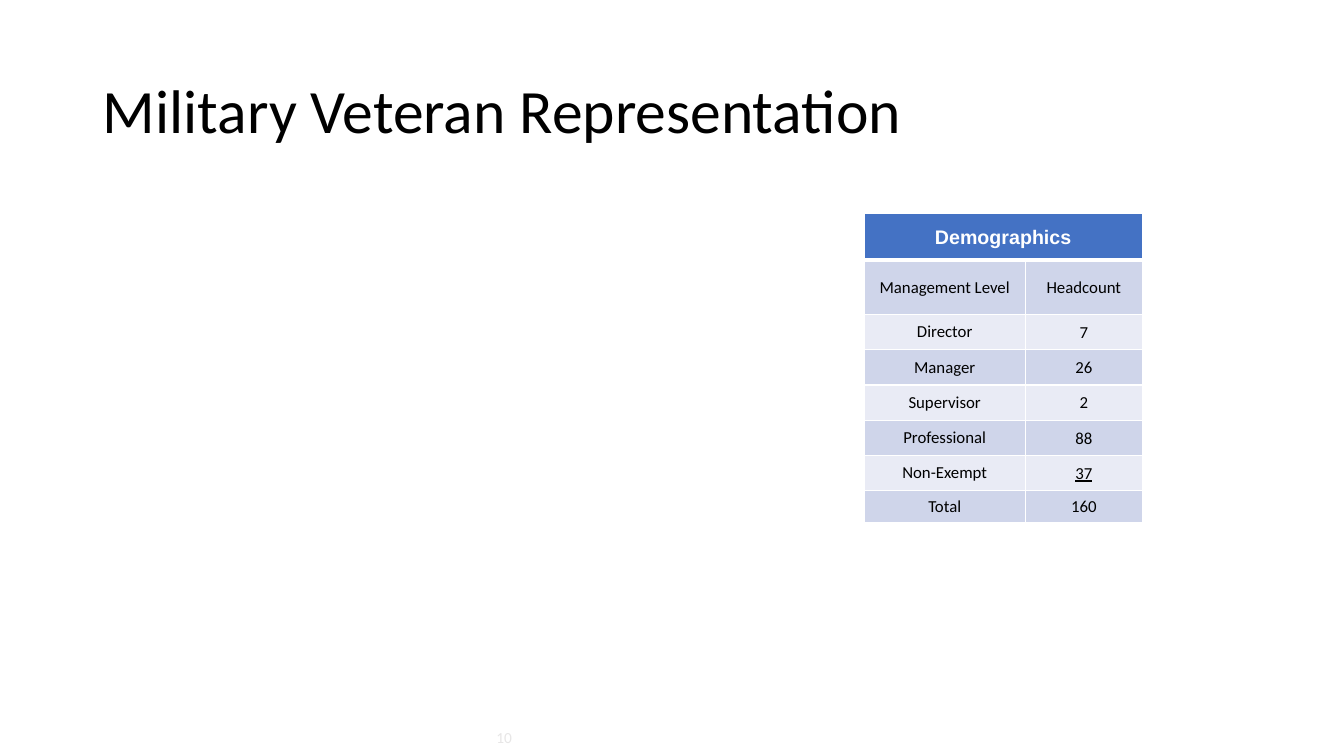
"""Build the Military Veteran Representation slide with its demographics table."""

import dataclasses
import typing

import lxml.etree
import pptx
import pptx.dml.color
import pptx.enum.text
import pptx.oxml
import pptx.oxml.ns
import pptx.util

EMU_PER_PX = 9144


@dataclasses.dataclass(frozen=True)
class Theme:
    body_font: str = "Calibri"
    header_font: str = "Arial"
    black: str = "000000"
    white: str = "FFFFFF"
    page_number: str = "E7E6E6"
    header_fill: str = "4472C4"
    bands: tuple[str, str] = ("CFD5EA", "E9EBF5")
    title_size: int = 44
    header_size: int = 14
    cell_size: int = 12
    page_number_size: int = 11
    thin_border: int = 1
    thick_border: int = 3


class Box(typing.NamedTuple):
    left: int
    top: int
    width: int
    height: int


class TextStyle(typing.NamedTuple):
    font: str
    size: int
    color: str
    bold: bool = False
    underline: bool = False


class LevelRow(typing.NamedTuple):
    level: str
    headcount: str
    height: int = 35
    level_margin: int = 4
    underline: bool = False


THEME = Theme()
TITLE_BOX = Box(92, 40, 1150, 145)
TABLE_BOX = Box(857, 212, 276, 306)
PAGE_NUMBER_BOX = Box(450, 717, 100, 30)
COLUMN_WIDTHS = (160, 116)
HEADER_HEIGHT = 46
LEVEL_ROWS = (
    LevelRow("Management Level", "Headcount", height=54, level_margin=0),
    LevelRow("Director", "7"),
    LevelRow("Manager", "26"),
    LevelRow("Supervisor", "2"),
    LevelRow("Professional", "88"),
    LevelRow("Non-Exempt", "37", underline=True),
    LevelRow("Total", "160", height=31, level_margin=0),
)


def px(length: int) -> pptx.util.Emu:
    """Turn whole px into EMU."""
    return pptx.util.Emu(length * EMU_PER_PX)


def emu_box(box: Box) -> tuple[pptx.util.Emu, ...]:
    """Give the four lengths of a box in EMU."""
    return tuple(px(length) for length in box)


def style_paragraph(paragraph, style: TextStyle) -> None:
    """Apply a text style to a whole paragraph."""
    font = paragraph.font
    font.name = style.font
    font.size = pptx.util.Pt(style.size)
    font.bold = style.bold
    font.underline = style.underline
    font.color.rgb = pptx.dml.color.RGBColor.from_string(style.color)


def set_borders(cell, bottom_width: int) -> None:
    """Draw white lines on the four sides of a cell."""
    properties = cell._tc.get_or_add_tcPr()
    for index, side in enumerate("LRTB"):
        points = bottom_width if side == "B" else THEME.thin_border
        line = lxml.etree.Element(
            pptx.oxml.ns.qn(f"a:ln{side}"), w=str(pptx.util.Pt(points))
        )
        fill = lxml.etree.SubElement(line, pptx.oxml.ns.qn("a:solidFill"))
        lxml.etree.SubElement(fill, pptx.oxml.ns.qn("a:srgbClr"), val=THEME.white)
        properties.insert(index, line)


def fill_cell(
    cell,
    text: str,
    style: TextStyle,
    fill: str,
    margin: int = 0,
    bottom_width: int = THEME.thin_border,
) -> None:
    """Set the text, margins, fill and borders of a cell."""
    cell.text = text
    cell.vertical_anchor = pptx.enum.text.MSO_ANCHOR.MIDDLE
    cell.margin_left = cell.margin_right = cell.margin_bottom = px(margin)
    cell.margin_top = px(max(margin, 1))
    paragraph = cell.text_frame.paragraphs[0]
    paragraph.alignment = pptx.enum.text.PP_ALIGN.CENTER
    style_paragraph(paragraph, style)
    cell.fill.solid()
    cell.fill.fore_color.rgb = pptx.dml.color.RGBColor.from_string(fill)
    set_borders(cell, bottom_width)


def format_title(slide) -> None:
    """Place and format the slide title."""
    title = slide.shapes.title
    title.left, title.top, title.width, title.height = emu_box(TITLE_BOX)
    title.text_frame.text = "Military Veteran Representation"
    title.text_frame.vertical_anchor = pptx.enum.text.MSO_ANCHOR.MIDDLE
    paragraph = title.text_frame.paragraphs[0]
    paragraph.alignment = pptx.enum.text.PP_ALIGN.LEFT
    paragraph.line_spacing = 0.9
    style_paragraph(
        paragraph, TextStyle(THEME.body_font, THEME.title_size, THEME.black)
    )


def add_demographics(slide) -> None:
    """Add the table of headcount by management level."""
    table = slide.shapes.add_table(
        len(LEVEL_ROWS) + 1, len(COLUMN_WIDTHS), *emu_box(TABLE_BOX)
    ).table
    table.first_row = False
    table.horz_banding = False
    for column, width in zip(table.columns, COLUMN_WIDTHS):
        column.width = px(width)

    table.rows[0].height = px(HEADER_HEIGHT)
    table.cell(0, 0).merge(table.cell(0, 1))
    header_style = TextStyle(
        THEME.header_font, THEME.header_size, THEME.white, bold=True
    )
    for column, text in enumerate(("Demographics", "")):
        fill_cell(
            table.cell(0, column),
            text,
            header_style,
            THEME.header_fill,
            bottom_width=THEME.thick_border,
        )

    level_style = TextStyle(THEME.body_font, THEME.cell_size, THEME.black)
    for index, row in enumerate(LEVEL_ROWS):
        table.rows[index + 1].height = px(row.height)
        band = THEME.bands[index % 2]
        headcount_style = level_style._replace(underline=row.underline)
        level_cell = table.cell(index + 1, 0)
        fill_cell(level_cell, row.level, level_style, band, row.level_margin)
        fill_cell(table.cell(index + 1, 1), row.headcount, headcount_style, band)


def add_page_number(slide) -> None:
    """Add the pale page number at the foot of the slide."""
    frame = slide.shapes.add_textbox(*emu_box(PAGE_NUMBER_BOX)).text_frame
    frame.word_wrap = True
    frame.vertical_anchor = pptx.enum.text.MSO_ANCHOR.MIDDLE
    frame.text = "10"
    paragraph = frame.paragraphs[0]
    paragraph.alignment = pptx.enum.text.PP_ALIGN.CENTER
    style_paragraph(
        paragraph,
        TextStyle(THEME.body_font, THEME.page_number_size, THEME.page_number),
    )


def main() -> None:
    """Build and save the presentation."""
    presentation = pptx.Presentation()
    presentation.slide_width = px(1333)
    presentation.slide_height = px(750)
    layout = presentation.slide_layouts.get_by_name("Title Only")
    slide = presentation.slides.add_slide(layout)
    format_title(slide)
    add_demographics(slide)
    add_page_number(slide)
    presentation.save("out.pptx")


if __name__ == "__main__":
    main()
